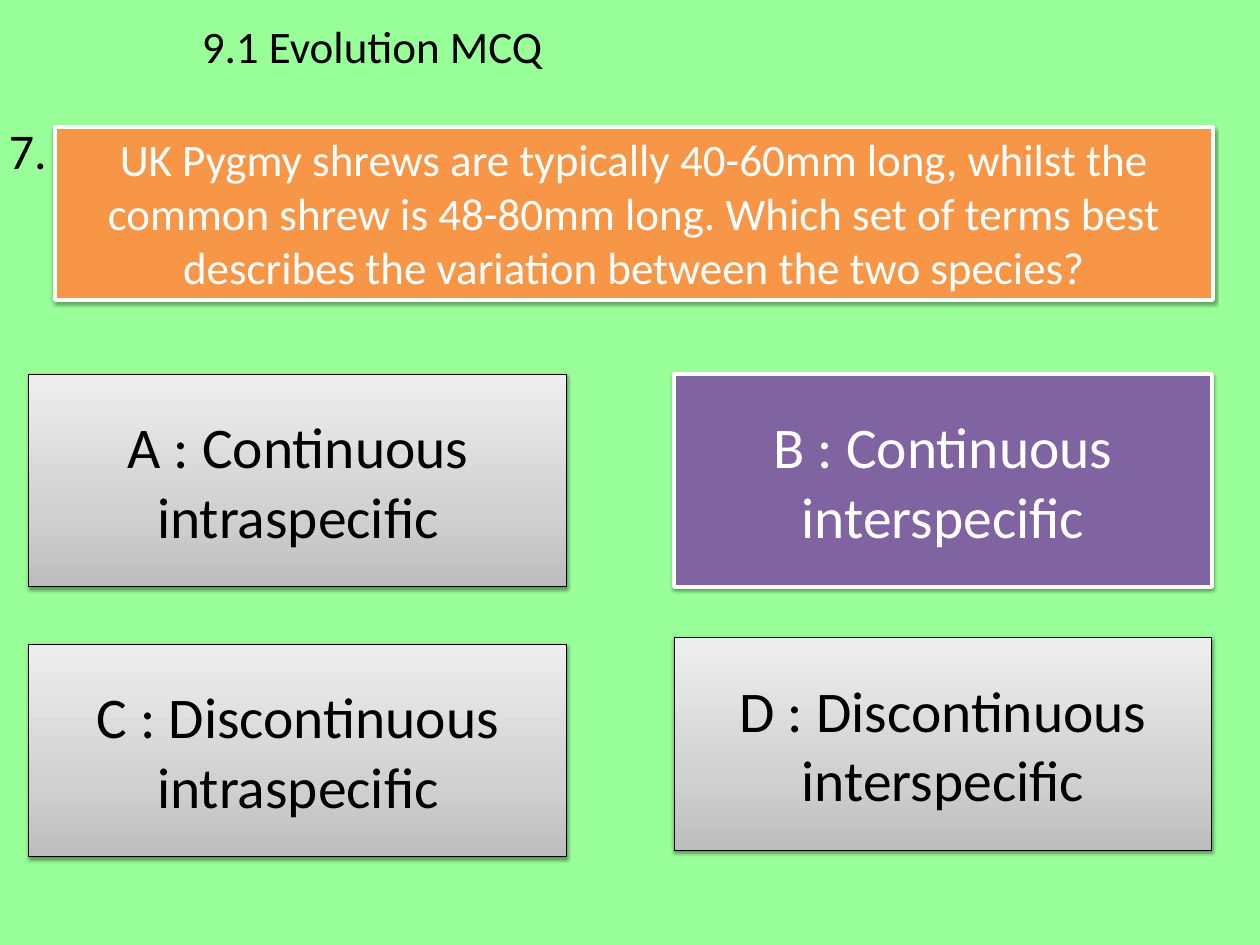
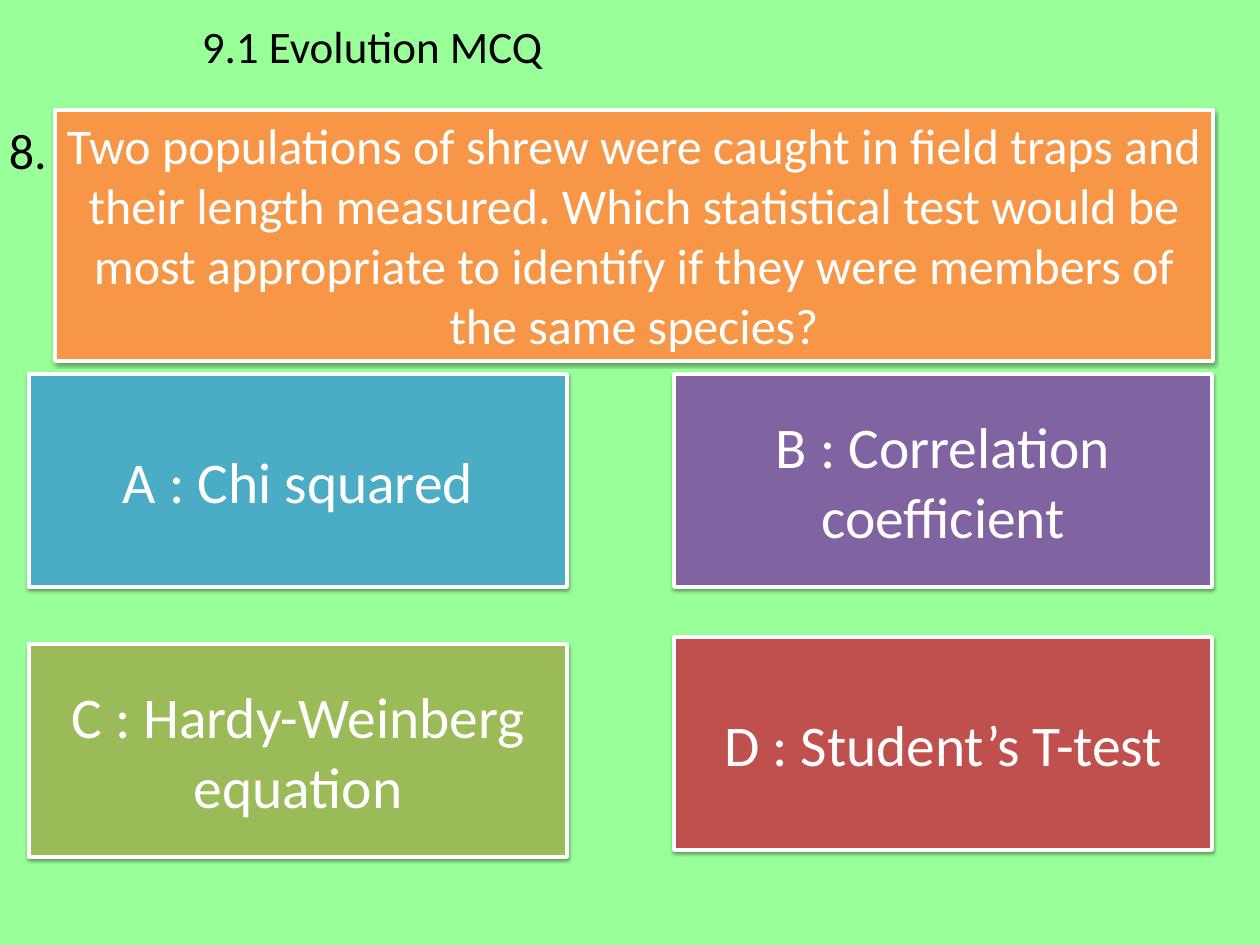
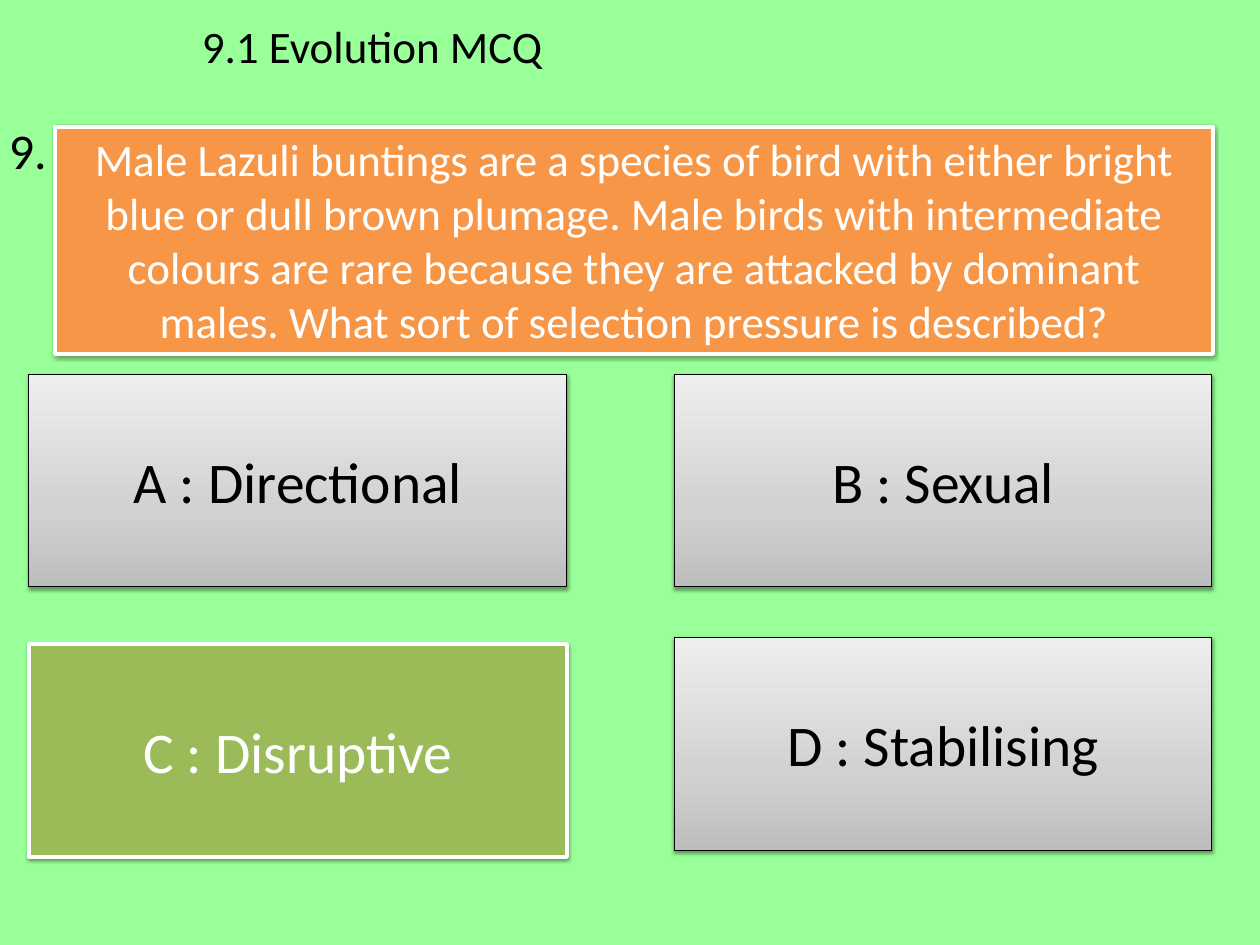
from copy import deepcopy

from lxml import etree
from pptx import Presentation, util as u
from pptx.dml.color import RGBColor
from pptx.enum import shapes, text
from pptx.oxml import parse_xml
from pptx.oxml.ns import nsdecls, qn

PX = 10160  # 90 px to the inch
INK, WHITE, PAGE, ORANGE = "000000", "FFFFFF", "99FF99", "F79646"
GREYS = [(0, "BDBDBD"), (0.35, "D1D1D1"), (1, "EEEEEE")]
SHADOW = (f'<a:outerShdw {nsdecls("a")} blurRad="40000" dist="20000" dir="5400000" '
          'rotWithShape="0"><a:srgbClr val="000000"><a:alpha val="38000"/>'
          '</a:srgbClr></a:outerShdw>')

# Answer boxes: letter, left, top, colour when lit
WIDE, HIGH = 538, 213
GRID = [("A", 29, 374, "4BACC6"), ("B", 674, 374, "8064A2"),
        ("C", 29, 644, "9BBB59"), ("D", 674, 637, "C0504D")]

# Number, question, its size, top and height, answers, lit letters
QUIZ = [
    (7, "UK Pygmy shrews are typically 40-60mm long, whilst the common shrew is "
        "48-80mm long. Which set of terms best describes the variation between "
        "the two species?", 36, 127, 173,
     ["Continuous intraspecific", "Continuous interspecific",
      "Discontinuous intraspecific", "Discontinuous interspecific"], "B"),
    (8, "Two populations of shrew were caught in field traps and their length "
        "measured. Which statistical test would be most appropriate to identify "
        "if they were members of the same species?", 40, 110, 251,
     ["Chi squared", "Correlation coefficient",
      "Hardy-Weinberg equation", "Student’s T-test"], "ABCD"),
    (9, "Male Lazuli buntings are a species of bird with either bright blue or "
        "dull brown plumage. Male birds with intermediate colours are rare "
        "because they are attacked by dominant males. What sort of selection "
        "pressure is described?", 36, 127, 227,
     ["Directional", "Sexual", "Disruptive", "Stabilising"], "C"),
]


def rgb(code):
    return RGBColor.from_string(code)


def put(slide, words, size, x, y, w, h, fill=None, answer=False):
    """Add a plain label, or a shadowed box when a fill is given."""
    place = [n * PX for n in (x, y, w, h)]
    ink = INK
    if fill is None:
        box = slide.shapes.add_textbox(*place)
    else:
        box = slide.shapes.add_shape(shapes.MSO_SHAPE.RECTANGLE, *place)
        if fill == GREYS:
            box.fill.gradient()
            box.fill.gradient_angle = 90
            stops = box._element.spPr.find(qn("a:gradFill")).find(qn("a:gsLst"))
            stops.insert(1, deepcopy(stops[0]))
            for stop, (pos, code) in zip(box.fill.gradient_stops, GREYS):
                stop.position = pos
                stop.color.rgb = rgb(code)
            edge, thick = INK, 0.75
        else:
            box.fill.solid()
            box.fill.fore_color.rgb = rgb(fill)
            ink, edge, thick = WHITE, WHITE, 3
        box.line.color.rgb = rgb(edge)
        box.line.width = u.Pt(thick)
        box.shadow.inherit = False
        box._element.spPr.find(qn("a:effectLst")).append(parse_xml(SHADOW))

    frame = box.text_frame
    frame.word_wrap = True
    if answer:
        frame.vertical_anchor = text.MSO_ANCHOR.MIDDLE
    else:
        frame.vertical_anchor = text.MSO_ANCHOR.TOP
        frame.auto_size = text.MSO_AUTO_SIZE.SHAPE_TO_FIT_TEXT
    para = frame.paragraphs[0]
    para.text = words
    para.alignment = text.PP_ALIGN.CENTER if fill else text.PP_ALIGN.LEFT
    para.font.name = "Calibri"
    para.font.size = u.Pt(size)
    para.font.color.rgb = rgb(ink)


deck = Presentation()
deck.slide_width, deck.slide_height = 1260 * PX, 945 * PX

for num, ask, size, top, high, answers, lit in QUIZ:
    slide = deck.slides.add_slide(deck.slide_layouts[6])
    slide.background.fill.solid()
    slide.background.fill.fore_color.rgb = rgb(PAGE)

    # Heading, question and its number
    put(slide, "9.1 Evolution MCQ", 36, 193, 14, 623, 64)
    put(slide, ask, size, 55, top, 1158, high, ORANGE)
    put(slide, f"{num}.", 40, 0, 115, 77, 69)

    # Answers, grey unless lit
    for (letter, x, y, tint), answer in zip(GRID, answers):
        put(slide, f"{letter} : {answer}", 46, x, y, WIDE, HIGH,
            tint if letter in lit else GREYS, answer=True)

deck.save("out.pptx")
